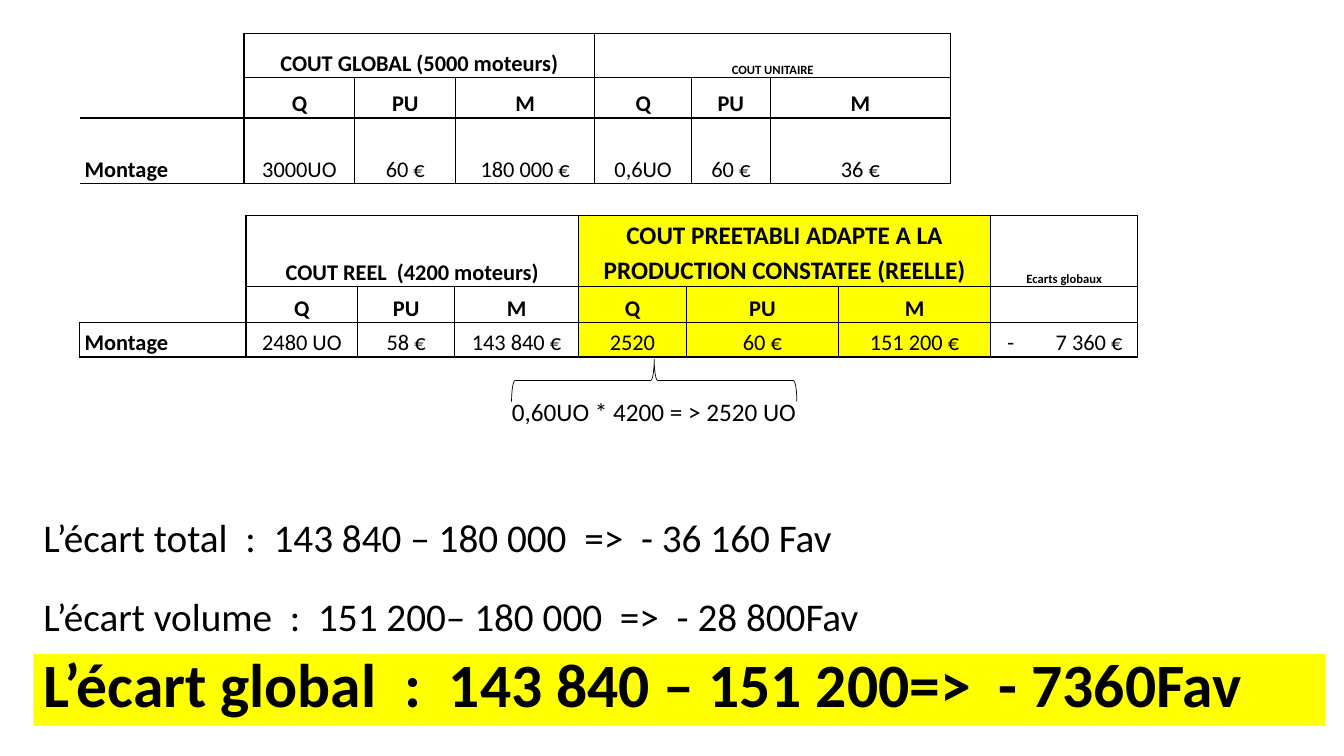
import pptx
import pptx.util
import pptx.dml.color
import pptx.enum.shapes
import pptx.enum.text
import pptx.oxml
import pptx.oxml.ns

Pt = pptx.util.Pt
Align = pptx.enum.text.PP_ALIGN
Anchor = pptx.enum.text.MSO_ANCHOR
Shape = pptx.enum.shapes.MSO_SHAPE
BLACK = pptx.dml.color.RGBColor(0, 0, 0)
YELLOW = pptx.dml.color.RGBColor(255, 255, 0)
FONT = "Calibri"

# heads: column -> (text, size, columns spanned)
BUDGET = {
    "at": (56.9, 23.8),
    "cols": [117.4, 79.2, 72, 99.4, 69.1, 56.2, 128.9, 13],
    "rows": [31.7, 28.8, 46.8],
    "heads": {1: ("COUT GLOBAL (5000 moteurs)", 16, 3), 4: ("COUT UNITAIRE", 9, 3)},
    "body": [
        ["", "Q", "PU", "M", "Q", "PU", "M", ""],
        ["Montage", "3000UO", "60 €", "180 000 €", "0,6UO", "60 €", "36 €", ""],
    ],
    "open": {(0, 0), (1, 0), (0, 7), (1, 7), (2, 7)},
    "left": False,
    "marked": (),
}
ACTUAL = {
    "at": (56.9, 154.1),
    "cols": [118.8, 79.9, 69.1, 88.6, 77, 108.7, 108.7, 105.1],
    "rows": [48.2, 25.9, 24.5],
    "heads": {
        1: ("COUT REEL  (4200 moteurs)", 16, 3),
        4: ("COUT PREETABLI ADAPTE A LA PRODUCTION CONSTATEE (REELLE)", 18, 3),
        7: ("Ecarts globaux", 9, 1),
    },
    "body": [
        ["", "Q", "PU", "M", "Q", "PU", "M", ""],
        ["Montage", "2480 UO", "58 €", "143 840 €", "2520", "60 €", "151 200 €", "-\t7 360 €"],
    ],
    "open": {(0, 0), (1, 0)},
    "left": True,
    "marked": (4, 5, 6),
}
# text, top, height, size, bold, fill
GAPS = [
    ("L’écart total  :  143 840 – 180 000  =>  - 36 160 Fav", 332.6, 72, 28, False, None),
    ("L’écart volume  :  151 200– 180 000  =>  - 28 800Fav", 388.8, 72, 28, False, None),
    ("L’écart global  :  143 840 – 151 200=>  - 7360Fav", 467.3, 51.1, 44, True, YELLOW),
]
NOTE = "0,60UO * 4200 = > 2520 UO"
SIDES = {"L": (0, -1), "R": (0, 1), "T": (-1, 0), "B": (1, 0)}


def put(para, text, size, bold=False, align=Align.LEFT, lead=1.0):
    para.text = text
    para.alignment = align
    para.line_spacing = lead
    para.font.name = FONT
    para.font.size = Pt(size)
    para.font.bold = bold
    para.font.color.rgb = BLACK


def rule(cell, side, drawn):
    """Set one cell border, before the fill as the schema wants."""
    paint = '<a:solidFill><a:srgbClr val="000000"/></a:solidFill>' if drawn else "<a:noFill/>"
    line = pptx.oxml.parse_xml(
        f'<a:ln{side} {pptx.oxml.ns.nsdecls("a")} w="{Pt(1)}">{paint}</a:ln{side}>')
    cell._tc.get_or_add_tcPr().append(line)


def set_tab(para, pos):
    tabs = pptx.oxml.parse_xml(
        f'<a:tabLst {pptx.oxml.ns.nsdecls("a")}><a:tab pos="{Pt(pos)}" algn="l"/></a:tabLst>')
    props = para._p.get_or_add_pPr()
    mark = props.find(pptx.oxml.ns.qn("a:defRPr"))
    mark.addprevious(tabs)


def add_grid(slide, data):
    cols, rows = data["cols"], data["rows"]
    frame = slide.shapes.add_table(len(rows), len(cols), *map(Pt, data["at"]),
                                   Pt(sum(cols)), Pt(sum(rows)))
    table = frame.table
    table.first_row = table.horz_banding = False
    for col, width in zip(table.columns, cols):
        col.width = Pt(width)
    for row, height in zip(table.rows, rows):
        row.height = Pt(height)

    boxed = {(r, c) for r in range(len(rows)) for c in range(len(cols))} - data["open"]
    for r in range(len(rows)):
        for c in range(len(cols)):
            cell = table.cell(r, c)
            cell.vertical_anchor = Anchor.BOTTOM
            cell.margin_left = cell.margin_right = Pt(3.6)
            cell.margin_top = cell.margin_bottom = 0
            for side, (down, over) in SIDES.items():
                drawn = (r, c) in boxed or (r + down, c + over) in boxed
                if side == "L" and c == 0:
                    drawn = drawn and data["left"]
                rule(cell, side, drawn)
            if c in data["marked"]:
                cell.fill.solid()
                cell.fill.fore_color.rgb = YELLOW
            else:
                cell.fill.background()

            if r == 0:
                text, size, span = data["heads"].get(c, ("", 9, 1))
                if span > 1:
                    cell.merge(table.cell(0, c + span - 1))
            else:
                text, size = data["body"][r - 1][c], 16
            para = cell.text_frame.paragraphs[0]
            tabbed = "\t" in text
            align = Align.LEFT if c == 0 or tabbed else Align.CENTER
            put(para, text, size, r < 2 or c == 0, align, 1.15)
            if tabbed:
                cell.margin_left = Pt(12)
                set_tab(para, 34.5)


def add_gap(slide, text, top, height, size, bold, fill):
    box = slide.shapes.add_textbox(Pt(23.8), Pt(top), Pt(923), Pt(height))
    if fill is not None:
        box.fill.solid()
        box.fill.fore_color.rgb = fill
    frame = box.text_frame
    frame.word_wrap = True
    frame.vertical_anchor = Anchor.BOTTOM
    put(frame.paragraphs[0], text, size, bold, lead=0.9)


def add_note(slide):
    box = slide.shapes.add_textbox(Pt(358.6), Pt(279.4), Pt(268.6), Pt(28.8))
    box.text_frame.word_wrap = True
    put(box.text_frame.paragraphs[0], NOTE, 18)
    brace = slide.shapes.add_shape(Shape.RIGHT_BRACE, Pt(452.2), Pt(169.9), Pt(30.2), Pt(203.8))
    brace.rotation = 270
    brace.shadow.inherit = False
    brace.fill.background()
    brace.line.color.rgb = BLACK
    brace.line.width = Pt(0.5)


def main():
    deck = pptx.Presentation()
    deck.slide_width, deck.slide_height = Pt(960), Pt(540)
    slide = deck.slides.add_slide(deck.slide_layouts[6])
    for data in (BUDGET, ACTUAL):
        add_grid(slide, data)
    add_note(slide)
    for gap in GAPS:
        add_gap(slide, *gap)
    deck.save("out.pptx")


if __name__ == "__main__":
    main()
